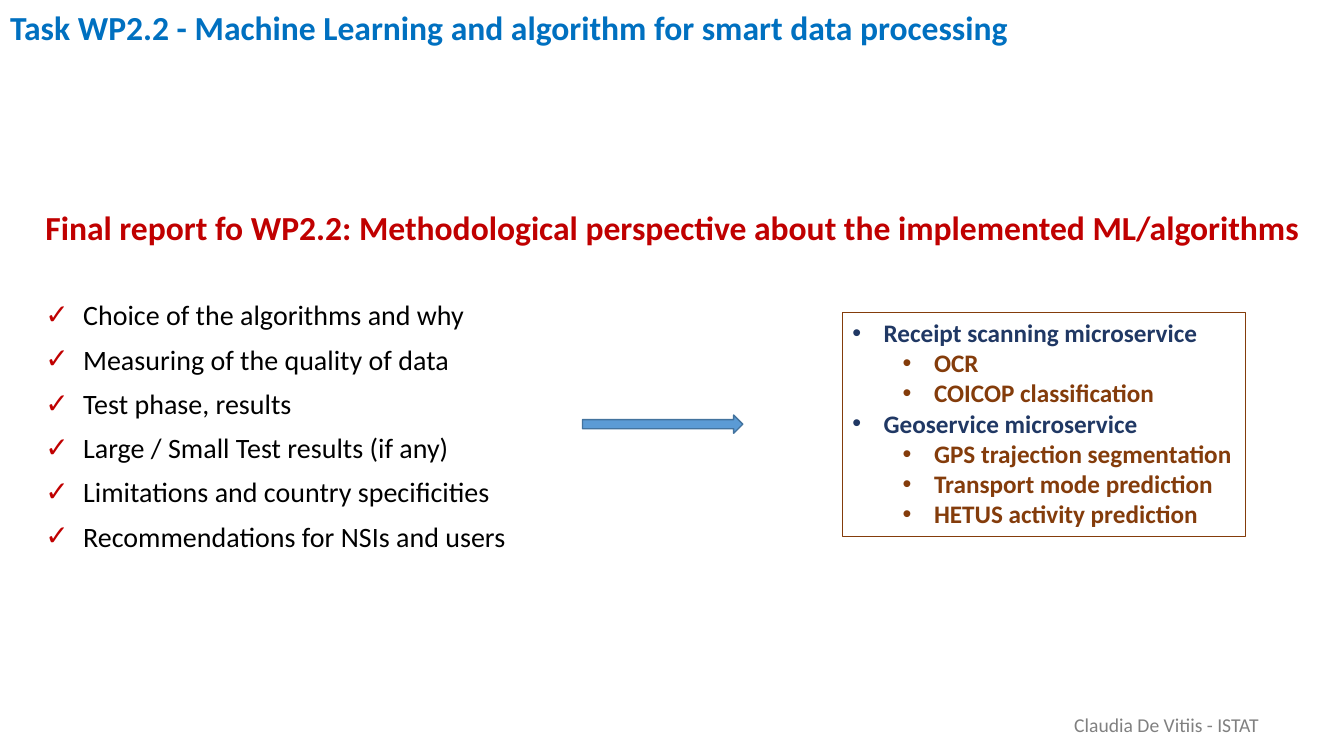
import dataclasses

import lxml.etree
import pptx
import pptx.dml.color
import pptx.enum.shapes
import pptx.enum.text
import pptx.oxml.ns
import pptx.util

Cm = pptx.util.Cm
Pt = pptx.util.Pt
MSO_ANCHOR = pptx.enum.text.MSO_ANCHOR
MSO_AUTO_SIZE = pptx.enum.text.MSO_AUTO_SIZE
MSO_SHAPE = pptx.enum.shapes.MSO_SHAPE


@dataclasses.dataclass(frozen=True)
class Theme:
    font: str = "Calibri"
    title: str = "0070C0"
    accent: str = "C00000"
    text: str = "000000"
    service: str = "203864"
    detail: str = "843C0B"
    arrow: str = "5B9BD5"
    arrow_line: str = "43739E"
    footer: str = "808080"
    heading_size: int = 24
    list_size: int = 20
    box_size: int = 18
    footer_size: int = 14


TOPICS = [
    "Choice of the algorithms and why",
    "Measuring of the quality of data",
    "Test phase, results",
    "Large / Small Test results (if any)",
    "Limitations and country specificities",
    "Recommendations for NSIs and users",
]
SERVICES = {
    "Receipt scanning microservice": ["OCR", "COICOP classification"],
    "Geoservice microservice": [
        "GPS trajection segmentation",
        "Transport mode prediction",
        "HETUS activity prediction",
    ],
}


def rgb(color):
    return pptx.dml.color.RGBColor.from_string(color)


def set_bullet(paragraph, character, color, margin, hanging):
    """Set the bullet and indents; no character means no bullet."""
    properties = paragraph._p.get_or_add_pPr()
    properties.set("marL", str(Cm(margin)))
    properties.set("indent", str(-Cm(hanging)))

    def add(parent, tag, **attributes):
        return lxml.etree.SubElement(parent, pptx.oxml.ns.qn(tag), attributes)

    if not character:
        add(properties, "a:buNone")
        return
    if color:
        add(add(properties, "a:buClr"), "a:srgbClr", val=color)
    add(properties, "a:buFont", typeface="Arial")
    add(properties, "a:buChar", char=character)


def write(frame, text, *, font, size, color, bold=False, level=0, spacing=1.0,
          before=0, after=0, bullet=None, bullet_color=None, margin=0, hanging=0):
    """Fill the first paragraph if it is empty, otherwise add one."""
    paragraph = frame.paragraphs[-1]
    if paragraph.runs:
        paragraph = frame.add_paragraph()
    paragraph.level = level
    paragraph.alignment = pptx.enum.text.PP_ALIGN.LEFT
    paragraph.line_spacing = spacing
    paragraph.space_before = Pt(before)
    paragraph.space_after = Pt(after)
    set_bullet(paragraph, bullet, bullet_color, margin, hanging)
    run = paragraph.add_run()
    run.text = text
    run.font.name = font
    run.font.size = Pt(size)
    run.font.bold = bold
    run.font.color.rgb = rgb(color)


class SlideBuilder:
    def __init__(self, slide, theme):
        self.slide = slide
        self.theme = theme

    def place(self, shape, left, top, width, height):
        shape.left, shape.top = Cm(left), Cm(top)
        shape.width, shape.height = Cm(width), Cm(height)

    def title(self, text, *area):
        shape = self.slide.shapes.title
        self.place(shape, *area)
        frame = shape.text_frame
        frame.auto_size = MSO_AUTO_SIZE.NONE
        frame.vertical_anchor = MSO_ANCHOR.BOTTOM
        write(frame, text, font=self.theme.font, size=self.theme.heading_size,
              color=self.theme.title, bold=True, spacing=0.9)

    def checklist(self, heading, items, *area):
        theme = self.theme
        shape = self.slide.placeholders[1]
        self.place(shape, *area)
        frame = shape.text_frame
        frame.auto_size = MSO_AUTO_SIZE.NONE
        write(frame, heading, font=theme.font, size=theme.heading_size,
              color=theme.accent, bold=True)
        for index, item in enumerate(items):
            write(frame, item, font=theme.font, size=theme.list_size,
                  color=theme.text, spacing=0.9, before=10 if index else 39,
                  bullet="✓", bullet_color=theme.accent, margin=0.95, hanging=0.95)

    def shape(self, kind, *area, line, weight, fill=None):
        shape = self.slide.shapes.add_shape(kind, *map(Cm, area))
        shape.shadow.inherit = False
        if fill:
            shape.fill.solid()
            shape.fill.fore_color.rgb = rgb(fill)
        else:
            shape.fill.background()
        shape.line.color.rgb = rgb(line)
        shape.line.width = Pt(weight)
        return shape

    def service_box(self, services, *area):
        theme = self.theme
        box = self.shape(MSO_SHAPE.RECTANGLE, *area, line=theme.detail, weight=0.75)
        frame = box.text_frame
        frame.word_wrap = False
        frame.auto_size = MSO_AUTO_SIZE.SHAPE_TO_FIT_TEXT
        frame.vertical_anchor = MSO_ANCHOR.TOP
        style = dict(font=theme.font, size=theme.box_size, bold=True,
                     bullet="•", hanging=0.79)
        for service, details in services.items():
            write(frame, service, color=theme.service, margin=0.79, **style)
            for detail in details:
                write(frame, detail, color=theme.detail, level=1, margin=2.06, **style)

    def arrow(self, *area):
        self.shape(MSO_SHAPE.RIGHT_ARROW, *area, fill=self.theme.arrow,
                   line=self.theme.arrow_line, weight=1)

    def footer(self, text, *area):
        frame = self.slide.shapes.add_textbox(*map(Cm, area)).text_frame
        frame.word_wrap = False
        frame.auto_size = MSO_AUTO_SIZE.SHAPE_TO_FIT_TEXT
        write(frame, text, font=self.theme.font, size=self.theme.footer_size,
              color=self.theme.footer, spacing=1.02, after=12)


def main():
    presentation = pptx.Presentation()
    presentation.slide_width = Cm(33.87)
    presentation.slide_height = Cm(19.05)
    slide = presentation.slides.add_slide(presentation.slide_layouts[1])
    builder = SlideBuilder(slide, Theme())
    builder.checklist(
        "Final report fo WP2.2: Methodological perspective about the implemented ML/algorithms",
        TOPICS, 0.89, 5.08, 32.49, 9.04)
    builder.service_box(SERVICES, 21.23, 7.87, 10.16, 5.64)
    builder.arrow(14.68, 10.46, 4.04, 0.46)
    builder.title("Task WP2.2 - Machine Learning and algorithm for smart data processing",
                  0, 0.05, 33.38, 1.27)
    builder.footer("Claudia De Vitiis - ISTAT", 26.82, 17.83, 5.21, 0.86)
    presentation.save("out.pptx")


if __name__ == "__main__":
    main()
